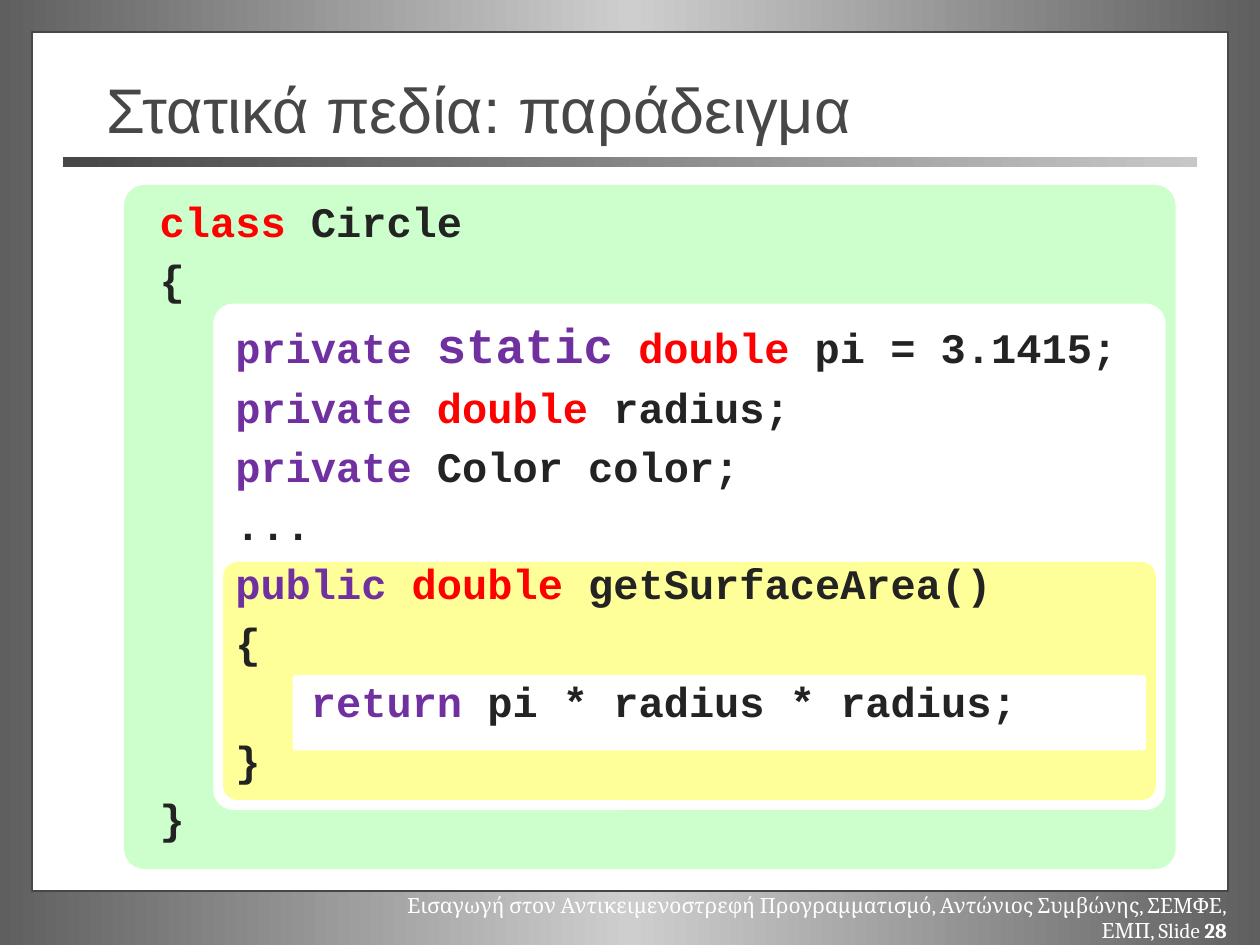
import copy

import pptx
import pptx.dml.color
import pptx.enum.shapes
import pptx.enum.text
import pptx.util
from pptx.util import Cm

GRAY, WHITE, BLACK = "474747", "FFFFFF", "232323"
RED, PURPLE = "FF0000", "7030A0"
SHAPES = pptx.enum.shapes.MSO_SHAPE
ALIGN = pptx.enum.text.PP_ALIGN
ANCHOR = pptx.enum.text.MSO_ANCHOR

CODE_LINES = [
    [("class", RED), (" Circle", BLACK)],
    [("{", BLACK)],
    [("   private ", PURPLE), ("static", PURPLE, 28), (" ", BLACK),
     ("double", RED), (" pi = 3.1415;", BLACK)],
    [("   private ", PURPLE), ("double", RED), (" radius;", BLACK)],
    [("   private ", PURPLE), ("Color color;", BLACK)],
    [("   ...", BLACK)],
    [("   public ", PURPLE), ("double ", RED), ("getSurfaceArea()", BLACK)],
    [("   {", BLACK)],
    [("      return", PURPLE), (" pi * radius * radius;", BLACK)],
    [("   }", BLACK)],
    [("}", BLACK)],
]

CODE_BLOCKS = [
    ((2.5, 3.73, 21.2, 13.79), "CCFFCC", 0.03),
    ((4.3, 6.12, 19.2, 10.21), WHITE, 0.04),
    ((4.5, 11.33, 18.8, 4.8), "FFFF99", 0.06),
    ((5.9, 13.61, 17.2, 1.52), WHITE, 0.04),
]


def color(value):
    return pptx.dml.color.RGBColor.from_string(value)


class SlideBuilder:
    code_font = "Courier New"
    title_font = "Arial"
    footer_font = "Cambria"
    code_size = 24
    code_spacing = 0.2

    def __init__(self, presentation):
        self.slide = presentation.slides.add_slide(presentation.slide_layouts[5])

    def format_font(self, font, name, size, value, bold=False):
        font.name = name
        font.size = pptx.util.Pt(size)
        font.color.rgb = color(value)
        font.bold = bold

    def gradient(self, fill, element, values):
        fill.gradient()
        fill.gradient_angle = 0
        stop_list = element.xpath(".//a:gsLst")[0]
        while len(stop_list) < len(values):
            stop_list.append(copy.deepcopy(stop_list[0]))
        for index, (stop, value) in enumerate(zip(fill.gradient_stops, values)):
            stop.position = index / (len(values) - 1)
            stop.color.rgb = color(value)

    def background(self, values):
        self.gradient(self.slide.background.fill, self.slide.element, values)

    def block(self, box, fill=None, radius=None, line=None, gradient=None):
        kind = SHAPES.RECTANGLE if radius is None else SHAPES.ROUNDED_RECTANGLE
        shape = self.slide.shapes.add_shape(kind, *map(Cm, box))
        shape.shadow.inherit = False
        if radius is not None:
            shape.adjustments[0] = radius
        if gradient:
            self.gradient(shape.fill, shape.element, gradient)
        else:
            shape.fill.solid()
            shape.fill.fore_color.rgb = color(fill)
        if line:
            shape.line.color.rgb = color(line)
            shape.line.width = pptx.util.Pt(1)
        else:
            shape.line.fill.background()

    def title(self, box, text):
        title = self.slide.shapes.title
        title.left, title.top, title.width, title.height = map(Cm, box)
        title.text_frame.text = text
        title.text_frame.vertical_anchor = ANCHOR.MIDDLE
        paragraph = title.text_frame.paragraphs[0]
        paragraph.alignment = ALIGN.LEFT
        self.format_font(paragraph.runs[0].font, self.title_font, 36, GRAY)
        title.element.getparent().append(title.element)

    def footer(self, box, text, number):
        frame = self.slide.shapes.add_textbox(*map(Cm, box)).text_frame
        frame.word_wrap = True
        paragraph = frame.paragraphs[0]
        paragraph.alignment = ALIGN.RIGHT
        for words, bold in ((text, False), (number, True)):
            run = paragraph.add_run()
            run.text = words
            self.format_font(run.font, self.footer_font, 12, WHITE, bold)

    def code(self, box, lines):
        frame = self.slide.shapes.add_textbox(*map(Cm, box)).text_frame
        frame.word_wrap = False
        for index, line in enumerate(lines):
            paragraph = frame.add_paragraph() if index else frame.paragraphs[0]
            largest = self.code_size
            for words, value, *size in line:
                run = paragraph.add_run()
                run.text = words
                points = size[0] if size else self.code_size
                largest = max(largest, points)
                self.format_font(run.font, self.code_font, points, value, True)
            if index:
                paragraph.space_before = pptx.util.Pt(self.code_spacing * largest)


def main():
    presentation = pptx.Presentation()
    presentation.slide_width = Cm(25.4)
    presentation.slide_height = Cm(19.05)
    builder = SlideBuilder(presentation)
    builder.background(["5F5F5F", "CECECE", "5F5F5F"])
    builder.block((0.65, 0.65, 24.1, 17.32), WHITE, line=GRAY)
    builder.footer(
        (7.2, 17.87, 17.78, 0.76),
        "Εισαγωγή στον Αντικειμενοστρεφή Προγραμματισμό, "
        "Αντώνιος Συμβώνης, ΣΕΜΦΕ, ΕΜΠ, Slide ",
        "28",
    )
    builder.block((1.27, 3.17, 22.86, 0.2), gradient=[GRAY, "C7C7C7"])
    for box, fill, radius in CODE_BLOCKS:
        builder.block(box, fill, radius)
    builder.title((1.9, 1.4, 21.59, 1.57), "Στατικά πεδία: παράδειγμα")
    builder.code((2.97, 3.81, 19.81, 13.66), CODE_LINES)
    presentation.save("out.pptx")


if __name__ == "__main__":
    main()
